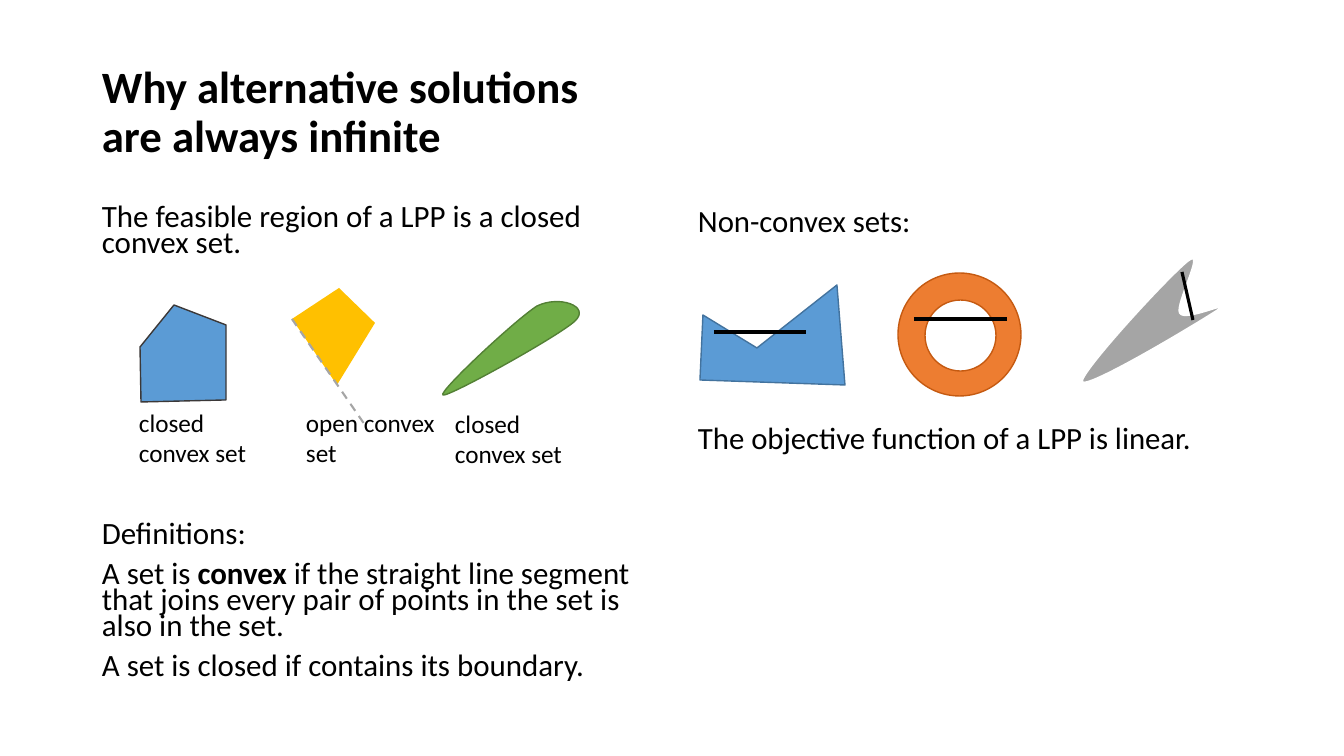
import pptx
import pptx.util
import pptx.dml.color
import pptx.enum.dml
import pptx.enum.shapes
import pptx.enum.text
import pptx.oxml.ns
import lxml.etree

EMU_PER_PX = 914400 / 100.8
SLIDE_SIZE = (1344, 756)
FONT = "Calibri"
COLORS = {
    "black": "000000", "white": "FFFFFF", "blue": "5B9BD5", "blue_edge": "43739E",
    "charcoal": "3B3838", "yellow": "FFC000", "gray": "A5A5A5", "green": "70AD47",
    "green_edge": "538035", "orange": "ED7D31", "orange_edge": "C55A11",
}

TITLE = {
    "box": (92, 40, 563, 147), "size": 32, "spacing": 0.9, "bold": True, "middle": True,
    "paragraphs": [(0, ["Why alternative solutions are always infinite"])],
}
DEFINITIONS = {
    "box": (92, 202, 563, 512), "size": 22.1, "spacing": 0.7,
    "paragraphs": [
        (0, ["The feasible region of a LPP is a closed convex set."]),
        (189, ["Definitions:"]),
        (10, ["A set is ", ("convex",), " if the straight line segment that joins "
              "every pair of points in the set is also in the set."]),
        (10, ["A set is closed if contains its boundary."]),
    ],
}
NON_CONVEX = {
    "box": (688, 201, 563, 480), "size": 22, "spacing": 0.9,
    "paragraphs": [
        (0, ["Non-convex sets:"]),
        (131, ["The objective function of a LPP is linear."]),
    ],
}
LABELS = [
    ("closed convex set", (129, 402, 155, 72)),
    ("open convex set", (296, 402, 149, 72)),
    ("closed convex set", (445, 403, 155, 72)),
]

POLYGONS = [
    ([(703, 315), (700, 380), (845, 385), (837, 285), (757, 348)], "blue", "blue_edge"),
    ([(140, 347), (141, 402), (226, 400), (226, 325), (174, 305)], "blue", "charcoal"),
    ([(292, 319), (337, 385), (375, 323), (339, 288)], "yellow", None),
]
CURVED_SETS = [
    ((442, 301, 136, 94), (443, 395), [
        ((437, 393), (515, 320), (537, 306)),
        ((559, 295), (591, 306), (575, 321)),
        ((559, 336), (449, 397), (443, 395)),
    ], "green", "green_edge", 1),
    ((1082, 258, 139, 124), (1082, 382), [
        ((1078, 374), (1173, 271), (1189, 260)),
        ((1206, 248), (1175, 305), (1180, 313)),
        ((1185, 322), (1235, 298), (1218, 310)),
        ((1200, 322), (1087, 390), (1082, 382)),
    ], "gray", "white", 1.5),
]
RING = [((898, 273, 123, 123), "orange"), ((925, 300, 71, 71), "white")]
OPEN_BOUNDARY = (292, 319, 365, 425)
SEGMENTS = [(714, 332, 806, 332), (914, 319, 1007, 319), (1182, 272, 1193, 320)]


def px(length):
    return pptx.util.Emu(round(length * EMU_PER_PX))


def rgb(name):
    return pptx.dml.color.RGBColor.from_string(COLORS[name])


def add_text(slide, box, paragraphs, size, spacing=None, bold=False, middle=False):
    frame = slide.shapes.add_textbox(*map(px, box)).text_frame
    frame.word_wrap = True
    if middle:
        frame.vertical_anchor = pptx.enum.text.MSO_ANCHOR.MIDDLE
    for index, (space_before, pieces) in enumerate(paragraphs):
        paragraph = frame.add_paragraph() if index else frame.paragraphs[0]
        paragraph.line_spacing = spacing
        paragraph.space_before = pptx.util.Pt(space_before)
        paragraph.font.name = FONT
        paragraph.font.size = pptx.util.Pt(size)
        paragraph.font.bold = bold
        paragraph.font.color.rgb = rgb("black")
        for piece in pieces:
            run = paragraph.add_run()
            if isinstance(piece, tuple):
                run.text = piece[0]
                run.font.bold = True
            else:
                run.text = piece


def paint(shape, fill, edge, width=1):
    shape.shadow.inherit = False
    shape.fill.solid()
    shape.fill.fore_color.rgb = rgb(fill)
    if edge:
        shape.line.color.rgb = rgb(edge)
        shape.line.width = pptx.util.Pt(width)
    else:
        shape.line.fill.background()


def add_outline(slide, points, fill, edge, width=1):
    corners = [(px(x), px(y)) for x, y in points]
    builder = slide.shapes.build_freeform(*corners[0], scale=1.0)
    builder.add_line_segments(corners[1:], close=True)
    shape = builder.convert_to_shape()
    paint(shape, fill, edge, width)
    return shape


def add_curved_set(slide, box, start, curves, fill, edge, width):
    qn = pptx.oxml.ns.qn
    shape = add_outline(slide, [start] + [curve[-1] for curve in curves[:-1]], fill, edge, width)
    left, top, box_width, box_height = box
    shape.left, shape.top, shape.width, shape.height = map(px, box)
    outline = next(shape._element.iter(qn("a:path")))
    for child in list(outline):
        outline.remove(child)
    outline.set("w", str(px(box_width)))
    outline.set("h", str(px(box_height)))
    steps = [("a:moveTo", [start])] + [("a:cubicBezTo", curve) for curve in curves]
    for tag, points in steps:
        step = lxml.etree.SubElement(outline, qn(tag))
        for x, y in points:
            lxml.etree.SubElement(step, qn("a:pt"), x=str(px(x - left)), y=str(px(y - top)))
    lxml.etree.SubElement(outline, qn("a:close"))


def add_line(slide, ends, color, width):
    line = slide.shapes.add_connector(pptx.enum.shapes.MSO_CONNECTOR.STRAIGHT, *map(px, ends))
    line.line.color.rgb = rgb(color)
    line.line.width = pptx.util.Pt(width)
    lxml.etree.SubElement(line._element.spPr, pptx.oxml.ns.qn("a:effectLst"))
    return line


def main():
    deck = pptx.Presentation()
    deck.slide_width, deck.slide_height = map(px, SLIDE_SIZE)
    slide = deck.slides.add_slide(deck.slide_layouts[6])

    for points, fill, edge in POLYGONS:
        add_outline(slide, points, fill, edge)
    for curved_set in CURVED_SETS:
        add_curved_set(slide, *curved_set)
    for box, fill in RING:
        circle = slide.shapes.add_shape(pptx.enum.shapes.MSO_SHAPE.OVAL, *map(px, box))
        paint(circle, fill, "orange_edge")

    boundary = add_line(slide, OPEN_BOUNDARY, "gray", 1.5)
    boundary.line.dash_style = pptx.enum.dml.MSO_LINE.DASH
    for ends in SEGMENTS:
        add_line(slide, ends, "black", 2.25)

    for block in (TITLE, DEFINITIONS, NON_CONVEX):
        add_text(slide, **block)
    for label, box in LABELS:
        add_text(slide, box, [(0, [label])], 18)

    deck.save("out.pptx")


if __name__ == "__main__":
    main()
